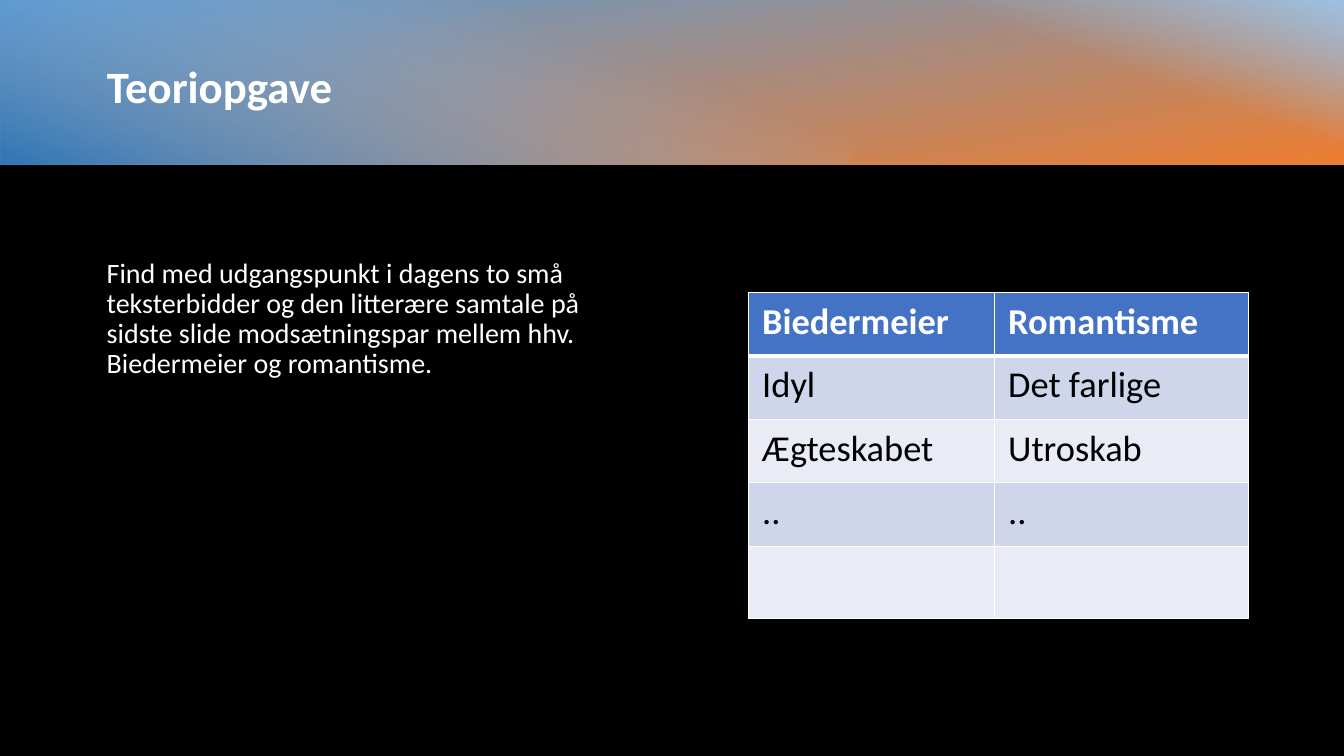
import dataclasses

import lxml.etree
import pptx
import pptx.dml.color
import pptx.enum.shapes
import pptx.enum.text
import pptx.oxml
import pptx.oxml.ns
import pptx.util

Inches = pptx.util.Inches
Pt = pptx.util.Pt
ANCHOR = pptx.enum.text.MSO_ANCHOR


@dataclasses.dataclass(frozen=True)
class Theme:
    font: str = "Calibri"
    background: str = "000000"
    light: str = "FFFFFF"
    dark: str = "000000"
    blue: str = "5B9BD5"
    orange: str = "ED7D31"
    pale_blue: str = "9DC3E6"
    deep_blue: str = "2E75B6"
    header: str = "4472C4"
    bands: tuple = ("CFD5EA", "E9EBF5")
    title_size: int = 32
    body_size: int = 20
    table_size: int = 26


THEME = Theme()


def rgb(value):
    return pptx.dml.color.RGBColor.from_string(value)


def write(frame, text, *, size, color, bold=False, spacing=None, anchor=ANCHOR.TOP):
    frame.word_wrap = True
    frame.vertical_anchor = anchor
    para = frame.paragraphs[0]
    if spacing:
        para.line_spacing = spacing
    span = para.add_run()
    span.text = text
    span.font.name = THEME.font
    span.font.size = Pt(size)
    span.font.bold = bold
    span.font.color.rgb = rgb(color)


def add_gradient(page, place, rotation, stops, angle):
    box = page.shapes.add_shape(
        pptx.enum.shapes.MSO_SHAPE.RECTANGLE, *map(Inches, place)
    )
    box.rotation = rotation
    box.shadow.inherit = False
    box.line.fill.background()
    box.fill.background()
    stop_xml = "".join(
        f'<a:gs pos="{position * 1000}"><a:srgbClr val="{color}">'
        f'<a:alpha val="{opacity * 1000}"/></a:srgbClr></a:gs>'
        for position, color, opacity in stops
    )
    gradient = pptx.oxml.parse_xml(
        f'<a:gradFill {pptx.oxml.ns.nsdecls("a")} rotWithShape="1">'
        f"<a:gsLst>{stop_xml}</a:gsLst>"
        f'<a:lin ang="{angle * 60000}" scaled="0"/></a:gradFill>'
    )
    properties = box.element.spPr
    properties.replace(properties.find(pptx.oxml.ns.qn("a:noFill")), gradient)


def add_banner(page):
    add_gradient(page, (5.84, -5.87, 1.66, 13.34), 270,
                 [(0, THEME.blue, 100), (100, THEME.orange, 100)], 170)
    add_gradient(page, (9.75, -1.97, 1.65, 5.54), 270,
                 [(59, THEME.pale_blue, 0), (100, THEME.pale_blue, 100)], 20)
    add_gradient(page, (3.39, -3.42, 1.66, 8.44), 90,
                 [(29, THEME.pale_blue, 0), (100, THEME.deep_blue, 100)], 20)


def place_title(page, text):
    title = page.shapes.title
    title.left, title.top, title.width, title.height = map(
        Inches, (0.96, 0.33, 11.46, 1.1)
    )
    title.text_frame.paragraphs[0].alignment = pptx.enum.text.PP_ALIGN.LEFT
    write(title.text_frame, text, size=THEME.title_size, color=THEME.light,
          bold=True, spacing=0.9, anchor=ANCHOR.MIDDLE)
    title.element.getparent().append(title.element)


def add_body(page, text):
    box = page.shapes.add_textbox(*map(Inches, (0.96, 2.52, 5.5, 4.02)))
    write(box.text_frame, text, size=THEME.body_size, color=THEME.light, spacing=0.9)


def set_borders(cell, **widths):
    properties = cell._tc.get_or_add_tcPr()
    for side in "LRTB":
        line = lxml.etree.SubElement(
            properties, pptx.oxml.ns.qn(f"a:ln{side}"), w=str(Pt(widths.get(side, 1)))
        )
        fill = lxml.etree.SubElement(line, pptx.oxml.ns.qn("a:solidFill"))
        lxml.etree.SubElement(fill, pptx.oxml.ns.qn("a:srgbClr"), val=THEME.light)


def format_cell(cell, text, row):
    is_header = row == 0
    cell.margin_left = cell.margin_right = Inches(0.14)
    cell.margin_top = cell.margin_bottom = Inches(0.07)
    set_borders(cell, B=3 if is_header else 1, T=3 if row == 1 else 1)
    cell.fill.solid()
    cell.fill.fore_color.rgb = rgb(THEME.header if is_header else THEME.bands[(row - 1) % 2])
    if text:
        write(cell.text_frame, text, size=THEME.table_size, bold=is_header,
              color=THEME.light if is_header else THEME.dark)


def add_contrasts(page, rows):
    widths = (2.44, 2.52)
    heights = (0.63,) * 4 + (0.72,)
    table = page.shapes.add_table(
        len(rows), len(widths), Inches(7.42), Inches(2.9),
        Inches(sum(widths)), Inches(sum(heights))
    ).table
    for column, width in zip(table.columns, widths):
        column.width = Inches(width)
    for index, (height, texts) in enumerate(zip(heights, rows)):
        table.rows[index].height = Inches(height)
        for column, text in enumerate(texts):
            format_cell(table.cell(index, column), text, index)


def main():
    deck = pptx.Presentation()
    deck.slide_width, deck.slide_height = Inches(13.33), Inches(7.5)
    page = deck.slides.add_slide(deck.slide_layouts.get_by_name("Title Only"))
    page.background.fill.solid()
    page.background.fill.fore_color.rgb = rgb(THEME.background)
    add_banner(page)
    place_title(page, "Teoriopgave")
    add_body(page, "Find med udgangspunkt i dagens to små teksterbidder og den "
                   "litterære samtale på sidste slide modsætningspar mellem hhv. "
                   "Biedermeier og romantisme.")
    add_contrasts(page, [
        ("Biedermeier", "Romantisme"),
        ("Idyl", "Det farlige"),
        ("Ægteskabet", "Utroskab"),
        ("..", ".."),
        ("", ""),
    ])
    deck.save("out.pptx")


if __name__ == "__main__":
    main()
